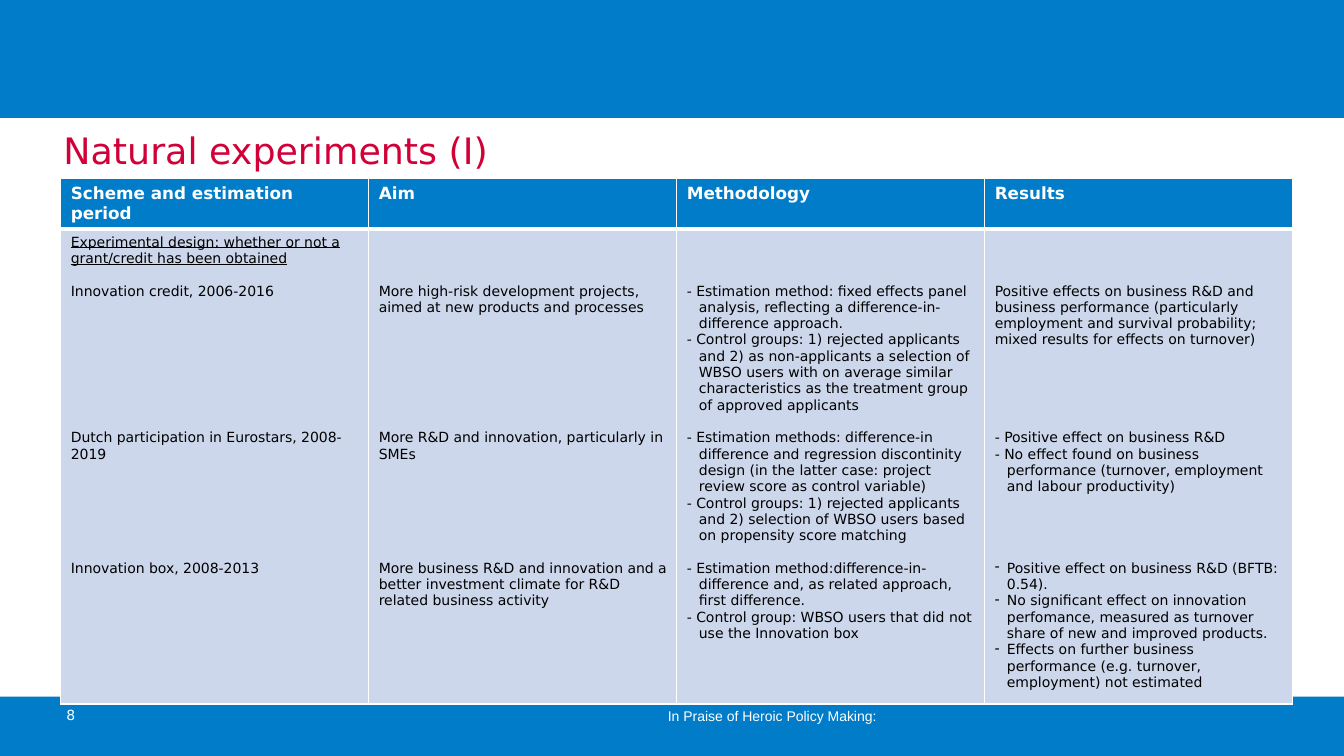
from dataclasses import dataclass
from typing import NamedTuple

from lxml.etree import SubElement
from pptx import Presentation
from pptx.dml.color import RGBColor as RGB
from pptx.enum.shapes import MSO_SHAPE as SHAPE
from pptx.enum.text import MSO_ANCHOR as ANCHOR
from pptx.oxml.ns import qn
from pptx.util import Pt


@dataclass(frozen=True)
class Theme:
    blue: str = "007CC8"
    red: str = "D10039"
    pale: str = "CCD7EB"
    white: str = "FFFFFF"
    black: str = "000000"
    sans: str = "DejaVu Sans"
    footer_font: str = "Arial"
    title_size: float = 26
    header_size: float = 12
    body_size: float = 10
    line: float = 11.64  # height of one body line
    hang: float = 8.64


class Box(NamedTuple):
    left: float
    top: float
    width: float
    height: float


class Label(NamedTuple):
    text: str
    box: Box
    size: float
    color: str
    font: str
    anchor: ANCHOR = ANCHOR.TOP


class Para(NamedTuple):
    text: str
    gap: int = 0  # lines of space before
    hang: bool = False
    dash: bool = False
    underline: bool = False


class Column(NamedTuple):
    heading: str
    skip: int  # lines left free at the top of the body cell
    paras: list[Para]


T = Theme()
BANDS = [Box(0, 0, 960, 84.24), Box(0, 497.5, 960, 42.5)]
LABELS = [
    Label("Natural experiments (I)", Box(38.2, 85, 857.5, 44.6),
          T.title_size, T.red, T.sans, ANCHOR.MIDDLE),
    Label("In Praise of Heroic Policy Making:", Box(470, 501.8, 437, 22.3),
          T.body_size, T.white, T.footer_font),
    Label("8", Box(40.3, 501.1, 74.9, 28.8), T.body_size, T.white, T.sans),
]
TABLE = Box(43.4, 127.7, 880, 368.2)
HEADER_HEIGHT = 35.2
CELL_MARGIN = 3.6
COLUMNS = [
    Column("Scheme and estimation period", 0, [
        Para("Experimental design: whether or not a grant/credit has been obtained",
             underline=True),
        Para("Innovation credit, 2006-2016", 1),
        Para("Dutch participation in Eurostars, 2008-2019", 8),
        Para("Innovation box, 2008-2013", 6),
    ]),
    Column("Aim", 3, [
        Para("More high-risk development projects, aimed at new products and processes"),
        Para("More R&D and innovation, particularly in SMEs", 7),
        Para("More business R&D and innovation and a better investment climate for "
             "R&D related business activity", 6),
    ]),
    Column("Methodology", 3, [
        Para("- Estimation method: fixed effects panel analysis, reflecting a "
             "difference-in-difference approach.", hang=True),
        Para("- Control groups: 1) rejected applicants and 2) as non-applicants a "
             "selection of WBSO users with on average similar characteristics as "
             "the treatment group of approved applicants", hang=True),
        Para("- Estimation methods: difference-in difference and regression "
             "discontinity design (in the latter case: project review score as "
             "control variable)", 1, hang=True),
        Para("- Control groups: 1) rejected applicants and 2) selection of WBSO "
             "users based on propensity score matching", hang=True),
        Para("- Estimation method:difference-in-difference and, as related "
             "approach, first difference.", 1, hang=True),
        Para("- Control group: WBSO users that did not use the Innovation box", hang=True),
    ]),
    Column("Results", 3, [
        Para("Positive effects on business R&D and business performance "
             "(particularly employment and survival probability; mixed results "
             "for effects on turnover)"),
        Para("- Positive effect on business R&D", 5, hang=True),
        Para("- No effect found on business performance (turnover, employment and "
             "labour productivity)", hang=True),
        Para("Positive effect on business R&D (BFTB: 0.54).", 4, hang=True, dash=True),
        Para("No significant effect on innovation perfomance, measured as turnover "
             "share of new and improved products.", hang=True, dash=True),
        Para("Effects on further business performance (e.g. turnover, employment) "
             "not estimated", hang=True, dash=True),
    ]),
]


def add_run(p, text: str, size: float, color: str, font: str = T.sans,
            bold: bool = False, underline: bool = False) -> None:
    r = p.add_run()
    r.text = text
    f = r.font
    f.size, f.name, f.bold, f.underline = Pt(size), font, bold, underline
    f.color.rgb = RGB.from_string(color)


def add_band(s, box: Box) -> None:
    sp = s.shapes.add_shape(SHAPE.RECTANGLE, *map(Pt, box))
    sp.shadow.inherit = False
    sp.fill.solid()
    sp.fill.fore_color.rgb = RGB.from_string(T.blue)
    sp.line.fill.background()


def add_label(s, label: Label) -> None:
    tf = s.shapes.add_textbox(*map(Pt, label.box)).text_frame
    tf.word_wrap = True
    tf.vertical_anchor = label.anchor
    add_run(tf.paragraphs[0], label.text, label.size, label.color, label.font)


def style_cell(cell, fill: str, bottom: float = 1) -> None:
    tc_pr = cell._tc.get_or_add_tcPr()
    for side, width in (("L", 1), ("R", 1), ("T", 1), ("B", bottom)):
        ln = SubElement(tc_pr, qn(f"a:ln{side}"), w=str(Pt(width)))
        SubElement(SubElement(ln, qn("a:solidFill")), qn("a:srgbClr"), val=T.white)
    cell.fill.solid()
    cell.fill.fore_color.rgb = RGB.from_string(fill)


def fill_body(cell, column: Column) -> None:
    cell.margin_top = Pt(CELL_MARGIN + column.skip * T.line)
    tf = cell.text_frame
    for i, para in enumerate(column.paras):
        p = tf.add_paragraph() if i else tf.paragraphs[0]
        if para.gap:
            p.space_before = Pt(para.gap * T.line)
        p_pr = p._p.get_or_add_pPr()
        if para.hang:
            p_pr.set("marL", str(Pt(T.hang)))
            p_pr.set("indent", str(-Pt(T.hang)))
        if para.dash:
            SubElement(p_pr, qn("a:buChar"), char="-")
        add_run(p, para.text, T.body_size, T.black, underline=para.underline)


def add_scheme_table(s) -> None:
    table = s.shapes.add_table(2, len(COLUMNS), *map(Pt, TABLE)).table
    table.horz_banding = False
    table.rows[0].height = Pt(HEADER_HEIGHT)
    table.rows[1].height = Pt(TABLE.height - HEADER_HEIGHT)
    for i, column in enumerate(COLUMNS):
        table.columns[i].width = Pt(TABLE.width / len(COLUMNS))
        head, body = table.cell(0, i), table.cell(1, i)
        style_cell(head, T.blue, bottom=3)
        add_run(head.text_frame.paragraphs[0], column.heading,
                T.header_size, T.white, bold=True)
        style_cell(body, T.pale)
        fill_body(body, column)


def main() -> None:
    prs = Presentation()
    prs.slide_width, prs.slide_height = Pt(960), Pt(540)
    s = prs.slides.add_slide(prs.slide_layouts[6])
    # Blue bands at top and bottom
    for band in BANDS:
        add_band(s, band)
    # Title, footer and slide number
    for label in LABELS:
        add_label(s, label)
    # Overview of the schemes
    add_scheme_table(s)
    prs.save("out.pptx")


if __name__ == "__main__":
    main()
